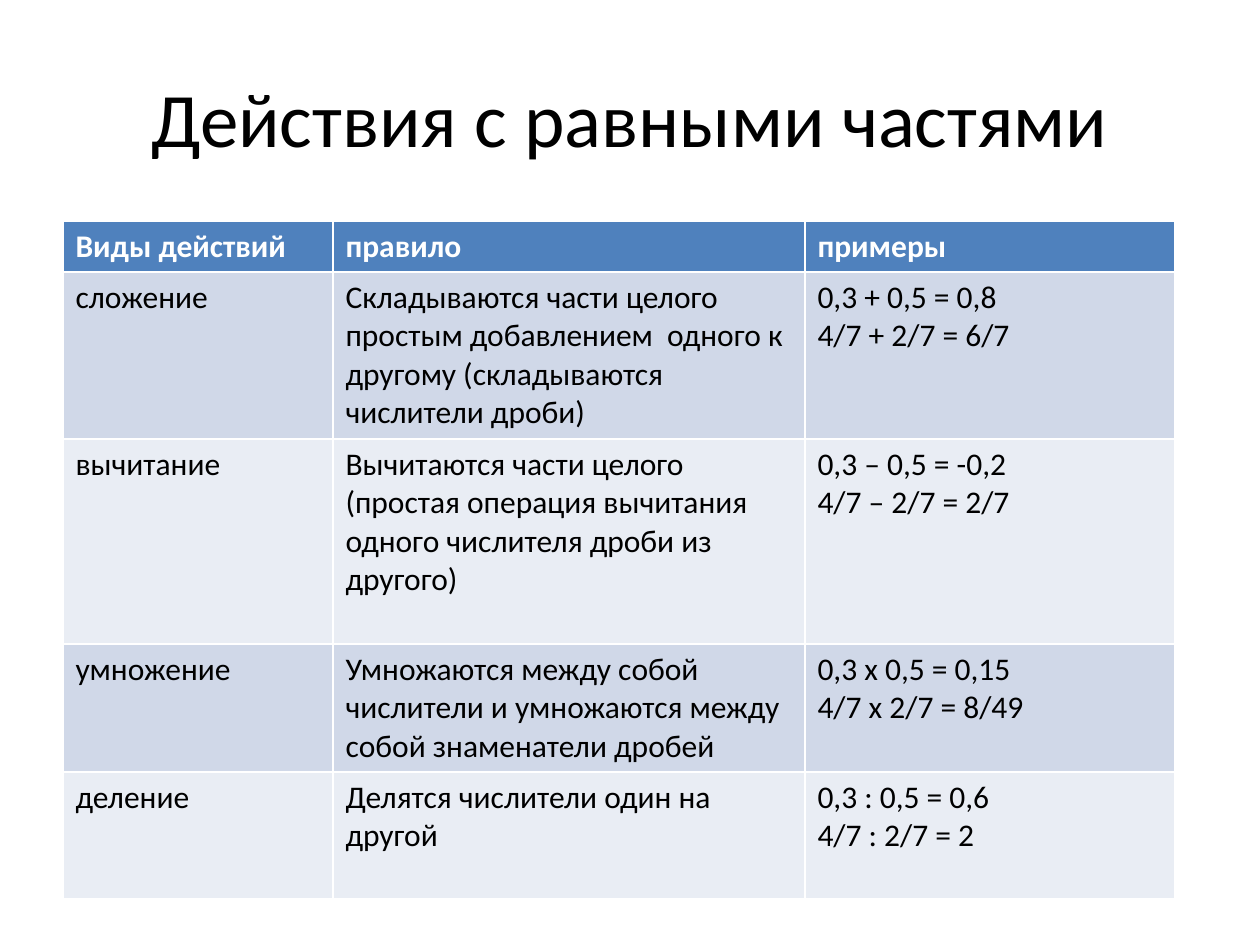
from pptx import Presentation
from pptx.dml.color import RGBColor
from pptx.enum.text import MSO_ANCHOR, PP_ALIGN
from pptx.util import Emu, Pt

EMU_PER_INCH = 914400
PX_PER_INCH = 126

HEADER = ["Виды действий", "правило", "примеры"]
OPERATIONS = [
    ["сложение",
     "Складываются части целого простым добавлением  одного к другому "
     "(складываются числители дроби)",
     "0,3 + 0,5 = 0,8\n4/7 + 2/7 = 6/7"],
    ["вычитание",
     "Вычитаются части целого (простая операция вычитания одного "
     "числителя дроби из другого)",
     "0,3 – 0,5 = -0,2\n4/7 – 2/7 = 2/7"],
    ["умножение",
     "Умножаются между собой числители и умножаются между собой "
     "знаменатели дробей",
     "0,3 х 0,5 = 0,15\n4/7 х 2/7 = 8/49"],
    ["деление",
     "Делятся числители один на другой",
     "0,3 : 0,5 = 0,6\n4/7 : 2/7 = 2"],
]
COLUMN_WIDTHS = [270, 472, 370]
ROW_HEIGHTS = [50, 167, 205, 128, 127]
HEADER_FILL = "4F81BD"
BAND_FILLS = ["D0D8E8", "E9EDF4"]


def px(length):
    return Emu(round(length * EMU_PER_INCH / PX_PER_INCH))


def color(value):
    return RGBColor.from_string(value)


def write(frame, text, size=18, ink="000000", bold=False, align=PP_ALIGN.LEFT):
    frame.text = text
    for paragraph in frame.paragraphs:
        paragraph.alignment = align
        for run in paragraph.runs:
            run.font.name = "Calibri"
            run.font.size = Pt(size)
            run.font.bold = bold
            run.font.color.rgb = color(ink)


def place_heading(slide, left, top, width, height):
    heading = slide.shapes.title
    heading.left, heading.top = px(left), px(top)
    heading.width, heading.height = px(width), px(height)
    heading.text_frame.vertical_anchor = MSO_ANCHOR.MIDDLE
    write(heading.text_frame, "Действия с равными частями",
          size=44, align=PP_ALIGN.CENTER)


def place_operations(slide, left, top, width, height):
    rows = [HEADER] + OPERATIONS
    operations = slide.shapes.add_table(
        len(rows), len(HEADER), px(left), px(top), px(width), px(height)).table
    for column, column_width in zip(operations.columns, COLUMN_WIDTHS):
        column.width = px(column_width)
    for row, row_height in zip(operations.rows, ROW_HEIGHTS):
        row.height = px(row_height)
    for row_number, texts in enumerate(rows):
        is_header = row_number == 0
        fill = HEADER_FILL if is_header else BAND_FILLS[(row_number - 1) % 2]
        ink = "FFFFFF" if is_header else "000000"
        for column_number, text in enumerate(texts):
            cell = operations.cell(row_number, column_number)
            cell.fill.solid()
            cell.fill.fore_color.rgb = color(fill)
            write(cell.text_frame, text, ink=ink, bold=is_header)


def main():
    deck = Presentation()
    deck.slide_width, deck.slide_height = px(1260), px(945)
    slide = deck.slides.add_slide(deck.slide_layouts[5])
    place_heading(slide, 63, 38, 1134, 158)
    place_operations(slide, 63, 221, sum(COLUMN_WIDTHS), sum(ROW_HEIGHTS))
    deck.save("out.pptx")


if __name__ == "__main__":
    main()
